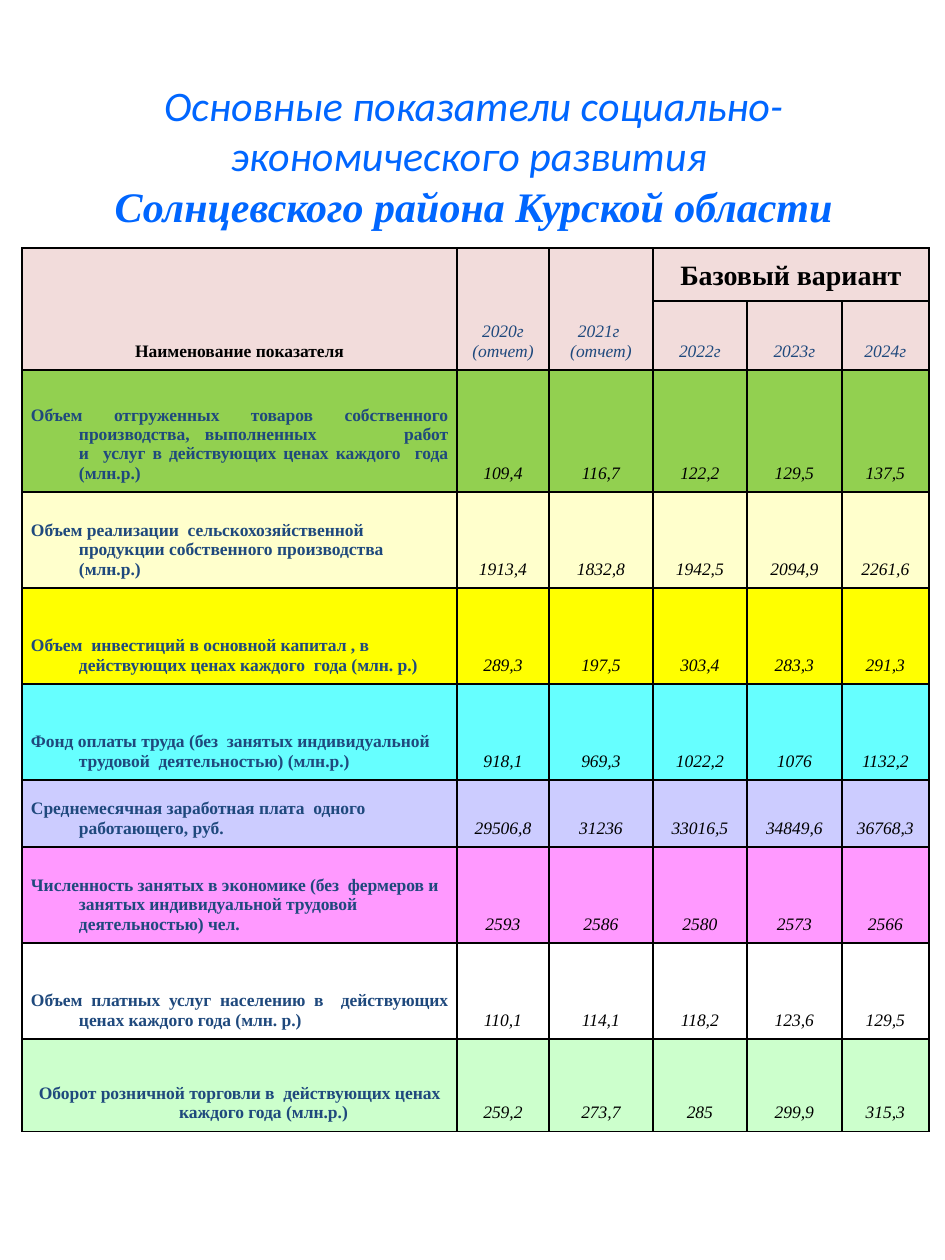
from lxml import etree
from pptx import Presentation
from pptx.dml.color import RGBColor
from pptx.enum.text import MSO_ANCHOR, PP_ALIGN
from pptx.oxml.ns import qn
from pptx.util import Pt

PX = 914400 // 126
LEFT, CENTER, JUSTIFY = PP_ALIGN.LEFT, PP_ALIGN.CENTER, PP_ALIGN.JUSTIFY
MIDDLE, BOTTOM = MSO_ANCHOR.MIDDLE, MSO_ANCHOR.BOTTOM
SERIF = "Times New Roman"
BLACK, NAVY, BLUE, PINK = "000000", "1F497D", "0066FF", "F2DCDB"
NO_STYLE = "{2D5ABB26-0587-4C30-8999-92F81FD0307C}"


def add_text(p, text, size=10, font=SERIF, color=BLACK, bold=False,
             italic=False, align=CENTER, hanging=0):
    p.alignment = align
    if hanging:
        pPr = p._p.get_or_add_pPr()
        pPr.set("marL", str(hanging * PX))
        pPr.set("indent", str(-hanging * PX))
    # A vertical tab in the text stands for a line break
    for i, part in enumerate(text.split("\v")):
        if i:
            p.add_line_break()
        if not part:
            continue
        r = p.add_run()
        r.text = part
        r.font.size, r.font.name = Pt(size), font
        r.font.bold, r.font.italic = bold, italic
        r.font.color.rgb = RGBColor.from_string(color)


def add_borders(cell, sides):
    tcPr = cell._tc.get_or_add_tcPr()
    for i, side in enumerate(sides):
        ln = etree.Element(qn("a:ln" + side), w=str(Pt(1)))
        fill = etree.SubElement(ln, qn("a:solidFill"))
        etree.SubElement(fill, qn("a:srgbClr"), val=BLACK)
        tcPr.insert(i, ln)


prs = Presentation()
prs.slide_width, prs.slide_height = 945 * PX, 1260 * PX
s = prs.slides.add_slide(prs.slide_layouts[6])

# Title
sp = s.shapes.add_textbox(48 * PX, 50 * PX, 851 * PX, 210 * PX)
tf = sp.text_frame
tf.word_wrap, tf.vertical_anchor = True, MIDDLE
p = tf.paragraphs[0]
add_text(p, "Основные показатели социально-экономического развития \v",
         size=24, font="Calibri", color=BLUE, italic=True)
add_text(p, "Солнцевского района Курской области",
         size=24, color=BLUE, bold=True, italic=True)

# Table grid
widths = [435, 92, 104, 94, 57, 38, 26, 61]
heights = [111, 98, 53, 69, 122, 96, 96, 96, 67, 96, 96, 93]
frame = s.shapes.add_table(len(heights), len(widths), 22 * PX, 39 * PX,
                           sum(widths) * PX, sum(heights) * PX)
table = frame.table
table._tbl.tblPr.find(qn("a:tableStyleId")).text = NO_STYLE
for col, width in zip(table.columns, widths):
    col.width = width * PX
for row, height in zip(table.rows, heights):
    row.height = height * PX

merges = [(0, 0, 0, 7), (1, 3, 1, 4), (1, 5, 1, 6), (2, 3, 2, 7)]
merges += [(2, c, 3, c) for c in range(3)]
merges += [(r, c, r, c + 1) for r in range(3, 12) for c in (4, 6)]
for r1, c1, r2, c2 in merges:
    table.cell(r1, c1).merge(table.cell(r2, c2))

# Header: row, column, lines, format
year = dict(color=NAVY, italic=True)
headers = [
    (2, 0, ["Наименование показателя"], dict(bold=True)),
    (2, 1, ["2020г", "(отчет)"], year),
    (2, 2, ["2021г ", "(отчет)"], year),
    (2, 3, ["Базовый вариант"], dict(size=16, bold=True)),
    (3, 3, ["2022г"], year),
    (3, 4, ["2023г"], year),
    (3, 6, ["2024г"], year),
]
for row, col, lines, style in headers:
    tf = table.cell(row, col).text_frame
    for i, line in enumerate(lines):
        p = tf.add_paragraph() if i else tf.paragraphs[0]
        add_text(p, line, hanging=48, **style)

# Indicators: fill, alignment of the name, name, values
indicators = [
    ("92D050", JUSTIFY,
     "Объем отгруженных товаров собственного производства,\tвыполненных работ\v"
     "и  услуг в действующих ценах каждого  года (млн.р.)",
     ["109,4", "116,7", "122,2", "129,5", "137,5"]),
    ("FFFFCC", LEFT,
     "Объем реализации  сельскохозяйственной продукции собственного "
     "производства (млн.р.)",
     ["1913,4", "1832,8", "1942,5", "2094,9", "2261,6"]),
    ("FFFF00", LEFT,
     "Объем  инвестиций в основной капитал , в действующих ценах каждого  "
     "года (млн. р.)",
     ["289,3", "197,5", "303,4", "283,3", "291,3"]),
    ("66FFFF", LEFT,
     "Фонд оплаты труда (без  занятых индивидуальной трудовой  "
     "деятельностью) (млн.р.)",
     ["918,1", "969,3", "1022,2", "1076", "1132,2"]),
    ("CCCCFF", LEFT,
     "Среднемесячная заработная плата  одного работающего, руб.",
     ["29506,8", "31236", "33016,5", "34849,6", "36768,3"]),
    ("FF99FF", LEFT,
     "Численность занятых в экономике (без  фермеров и занятых "
     "индивидуальной трудовой  деятельностью) чел.",
     ["2593", "2586", "2580", "2573", "2566"]),
    (None, JUSTIFY,
     "Объем платных услуг населению в  действующих ценах каждого года "
     "(млн. р.)",
     ["110,1", "114,1", "118,2", "123,6", "129,5"]),
    ("CCFFCC", CENTER,
     "Оборот розничной торговли в  действующих ценах каждого года (млн.р.)",
     ["259,2", "273,7", "285", "299,9", "315,3"]),
]
for row, (fill, align, name, values) in enumerate(indicators, 4):
    p = table.cell(row, 0).text_frame.paragraphs[0]
    add_text(p, name, color=NAVY, bold=True, align=align, hanging=48)
    if "\t" in name:
        tabs = etree.SubElement(p._p.get_or_add_pPr(), qn("a:tabLst"))
        etree.SubElement(tabs, qn("a:tab"), pos=str(256 * PX), algn="l")
    for col, value in zip([1, 2, 3, 4, 6], values):
        p = table.cell(row, col).text_frame.paragraphs[0]
        add_text(p, value, italic=True, hanging=48 if col < 4 else 0)

# Fills, margins and borders
fills = [None, None, PINK, PINK] + [fill for fill, *_ in indicators]
for row, fill in enumerate(fills):
    for col in range(len(widths)):
        cell = table.cell(row, col)
        if fill:
            cell.fill.solid()
            cell.fill.fore_color.rgb = RGBColor.from_string(fill)
        else:
            cell.fill.background()
        if row < 2:
            add_borders(cell, "B" if row else "")
            continue
        cell.vertical_anchor = BOTTOM
        cell.margin_left = cell.margin_right = 9 * PX
        cell.margin_top = cell.margin_bottom = 9 * PX
        if not cell.is_spanned:
            add_borders(cell, "LRTB")
        elif col == len(widths) - 1:
            add_borders(cell, "R")

prs.save("out.pptx")
